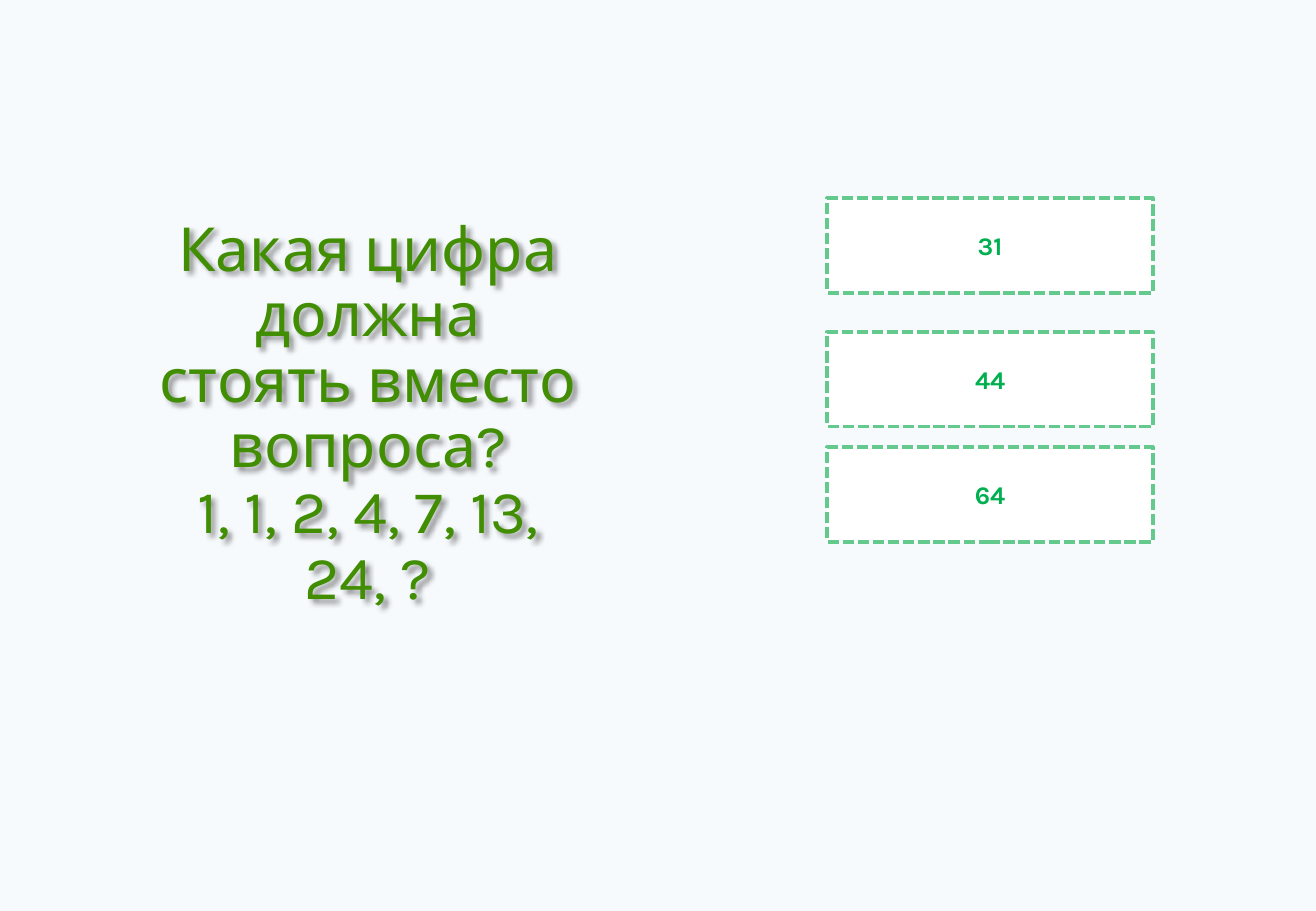
from dataclasses import dataclass

from lxml import etree
from pptx import Presentation
from pptx.dml.color import RGBColor
from pptx.enum.dml import MSO_LINE
from pptx.enum.shapes import MSO_SHAPE
from pptx.enum.text import MSO_ANCHOR, PP_ALIGN
from pptx.oxml.ns import qn
from pptx.util import Pt


@dataclass(frozen=True)
class Theme:
    """Colours and type sizes of the quiz slide."""
    background: str = "F7FAFD"
    question: str = "418E03"
    answer: str = "00B050"
    answer_fill: str = "FFFFFF"
    answer_border: str = "63C98C"
    shadow: str = "000000"
    font: str = "Karla"
    question_size: float = 36
    answer_size: float = 15


THEME = Theme()
QUESTION = "Какая цифра должна стоять вместо вопроса?\v1, 1, 2, 4, 7, 13, 24, ?"
ANSWERS = (("31", 0), ("44", 79.2), ("64", 147.6))
ANSWER_HEIGHT = 56.2


def rgb(value):
    """Turn a hex string into a colour."""
    return RGBColor.from_string(value)


def set_text(shape, text, size, color, bold=False, spacing=0.9):
    """Write centred text in the middle of a shape."""
    frame = shape.text_frame
    frame.word_wrap = True
    frame.vertical_anchor = MSO_ANCHOR.MIDDLE
    frame.text = text
    paragraph = frame.paragraphs[0]
    paragraph.alignment = PP_ALIGN.CENTER
    paragraph.line_spacing = spacing
    for run in paragraph.runs:
        run.font.name = THEME.font
        run.font.size = Pt(size)
        run.font.bold = bold
        run.font.color.rgb = rgb(color)


def add_soft_shadow(shape):
    """Give a shape a soft shadow down and to the right."""
    effects = etree.SubElement(shape._element.spPr, qn("a:effectLst"))
    shadow = etree.SubElement(effects, qn("a:outerShdw"), blurRad=str(Pt(3)),
                              dist=str(Pt(3)), dir="2700000", algn="tl")
    color = etree.SubElement(shadow, qn("a:srgbClr"), val=THEME.shadow)
    etree.SubElement(color, qn("a:alpha"), val="43000")


def add_question(slide, left, top, width, height):
    """Place the question in its box."""
    shape = slide.shapes.add_textbox(Pt(left), Pt(top), Pt(width), Pt(height))
    add_soft_shadow(shape)
    set_text(shape, QUESTION, THEME.question_size, THEME.question)


def add_answers(slide, left, top, width):
    """Place the dashed answer cards down a column."""
    for text, offset in ANSWERS:
        shape = slide.shapes.add_shape(MSO_SHAPE.RECTANGLE, Pt(left), Pt(top + offset),
                                       Pt(width), Pt(ANSWER_HEIGHT))
        shape.shadow.inherit = False
        shape.fill.solid()
        shape.fill.fore_color.rgb = rgb(THEME.answer_fill)
        shape.line.color.rgb = rgb(THEME.answer_border)
        shape.line.width = Pt(2.25)
        shape.line.dash_style = MSO_LINE.SQUARE_DOT
        set_text(shape, text, THEME.answer_size, THEME.answer, bold=True, spacing=1.0)


def main():
    """Build and save the quiz slide."""
    presentation = Presentation()
    presentation.slide_width, presentation.slide_height = Pt(780), Pt(540)
    slide = presentation.slides.add_slide(presentation.slide_layouts[6])
    slide.background.fill.solid()
    slide.background.fill.fore_color.rgb = rgb(THEME.background)
    add_question(slide, 82.8, 128.9, 270.7, 234.7)
    add_answers(slide, 490.3, 117.4, 193)
    presentation.save("out.pptx")


if __name__ == "__main__":
    main()
